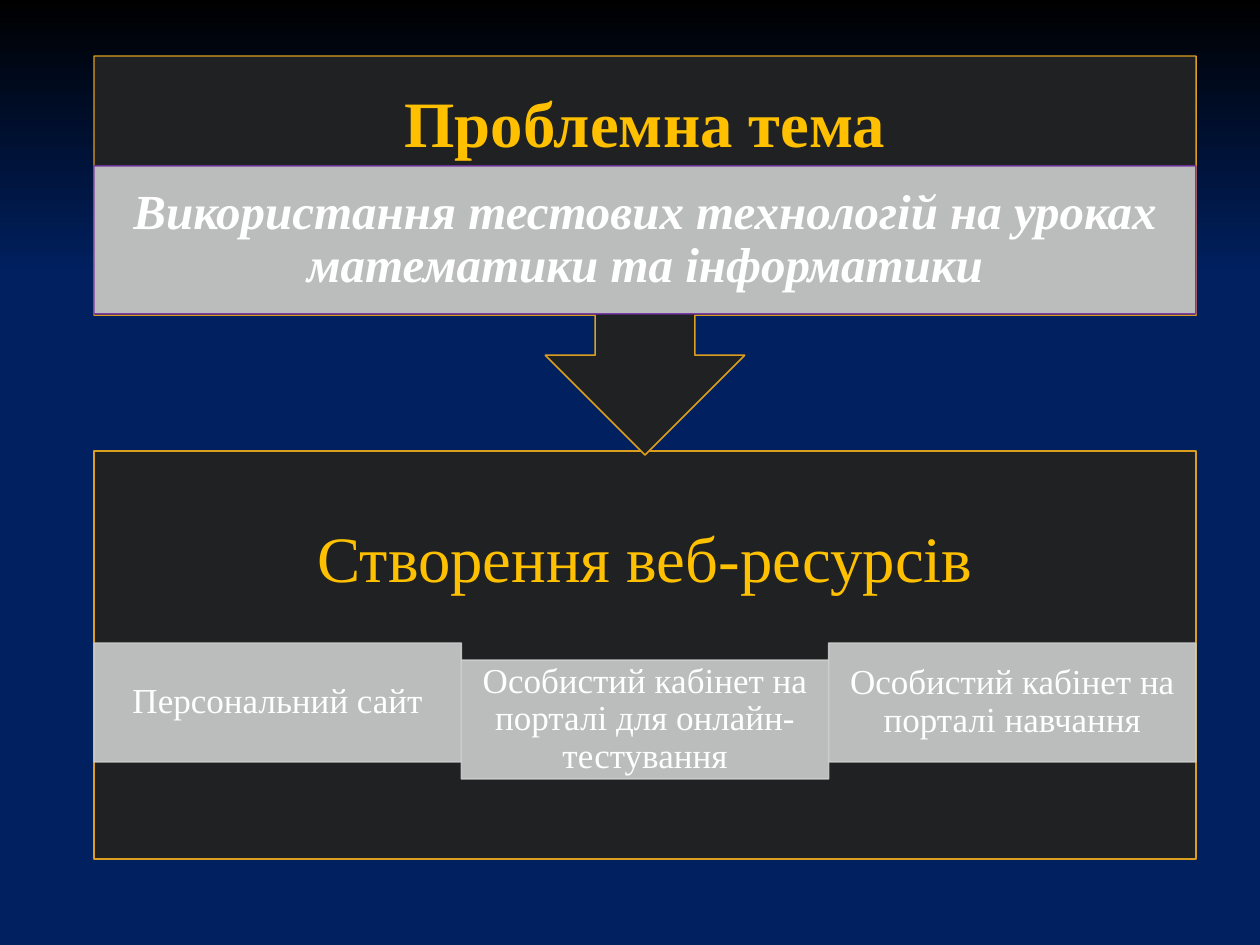
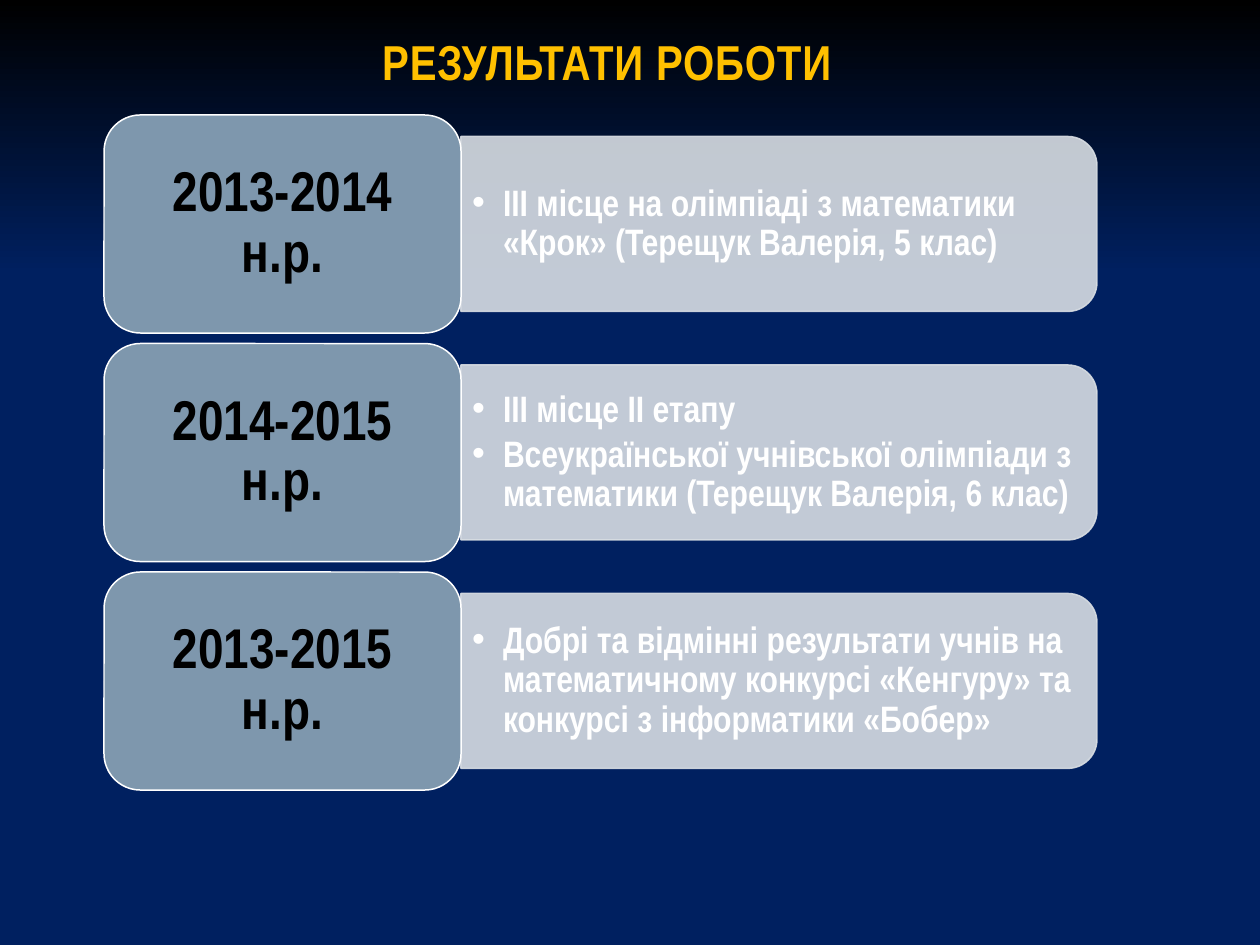
from lxml.etree import SubElement
from pptx import Presentation
from pptx.dml.color import RGBColor
from pptx.enum.shapes import MSO_SHAPE as Shape
from pptx.enum.text import MSO_ANCHOR as Anchor, PP_ALIGN as Align
from pptx.oxml.ns import qn
from pptx.util import Pt

TOPIC = "Проблемна тема"
TOPIC_TEXT = "Використання тестових технологій на уроках математики та інформатики"
RESOURCES = "Створення веб-ресурсів"
RESOURCE_KINDS = [
    "Персональний сайт",
    "Особистий кабінет на порталі для онлайн-тестування",
    "Особистий кабінет на порталі навчання",
]
RESULTS_TITLE = "РЕЗУЛЬТАТИ РОБОТИ"
RESULTS = [
    ("2013-2014 н.р.", ["ІІІ місце на олімпіаді з математики «Крок» (Терещук Валерія, 5 клас)"]),
    ("2014-2015 н.р.", ["ІІІ місце ІІ етапу",
                        "Всеукраїнської учнівської олімпіади з математики (Терещук Валерія, 6 клас)"]),
    ("2013-2015 н.р.", ["Добрі та відмінні результати учнів на математичному конкурсі "
                        "«Кенгуру» та конкурсі з інформатики «Бобер»"]),
]

NAVY, BLACK, WHITE, GOLD = "002060", "000000", "FFFFFF", "FFC000"
PANEL, PANEL_EDGE, CHIP, PURPLE = "1F2123", "DC9E1F", "CDCDCD", "7030A0"
YEAR_FILL, BAR_FILL = "7E97AD", "D8DDE3"
SERIF, NARROW = "Times New Roman", "Arial Narrow"

HEADING = {"name": SERIF, "size": Pt(37), "color": GOLD}
TOPIC_HEADING = HEADING | {"bold": True}
TOPIC_BODY = {"name": SERIF, "size": Pt(28), "color": WHITE, "bold": True, "italic": True}
CHIP_TEXT = {"name": SERIF, "size": Pt(20), "color": WHITE}
TITLE = {"name": NARROW, "size": Pt(28), "color": GOLD, "bold": True}
YEAR = {"name": NARROW, "size": Pt(32), "color": BLACK, "bold": True}
RESULT = {"name": NARROW, "size": Pt(21), "color": WHITE, "bold": True}

SCALE = 914400 / 126
PANEL_LEFT, PANEL_WIDTH = 94, 1102


def px(length):
    return round(length * SCALE)


def rgb(value):
    return RGBColor.from_string(value)


def set_opacity(fill, percent):
    """Make a solid fill let the background through."""
    color = fill._xPr.find(qn("a:solidFill"))[0]
    SubElement(color, qn("a:alpha"), val=str(percent * 1000))


def add_block(slide, kind, place, fill, edge, opacity=100):
    block = slide.shapes.add_shape(kind, *map(px, place))
    block.shadow.inherit = False
    block.line.width = Pt(0.85)
    for paint, color in ((block.fill, fill), (block.line.fill, edge)):
        paint.solid()
        paint.fore_color.rgb = rgb(color)
        if opacity < 100:
            set_opacity(paint, opacity)
    return block


def add_bullet(para):
    properties = para._p.get_or_add_pPr()
    properties.set("marL", str(px(31)))
    properties.set("indent", str(-px(31)))
    SubElement(properties, qn("a:buFont"), typeface="Arial")
    SubElement(properties, qn("a:buChar"), char="•")


def write(shape, texts, style, insets, bullets=False, anchor=Anchor.MIDDLE):
    """Fill a shape with paragraphs; insets run left, top, right, bottom."""
    frame = shape.text_frame
    frame.word_wrap = True
    frame.vertical_anchor = anchor
    for side, inset in zip(("left", "top", "right", "bottom"), insets):
        setattr(frame, f"margin_{side}", px(inset))
    for number, text in enumerate(texts):
        para = frame.add_paragraph() if number else frame.paragraphs[0]
        para.alignment = Align.LEFT if bullets else Align.CENTER
        para.line_spacing = 0.9
        if bullets:
            para.space_after = Pt(3)
            add_bullet(para)
        span = para.add_run()
        span.text = text
        for name, value in style.items():
            if name == "color":
                span.font.color.rgb = rgb(value)
            else:
                setattr(span.font, name, value)


def paint_background(master):
    fill = master.background.fill
    fill.gradient()
    fill.gradient_angle = 270
    for stop, color, position in zip(fill.gradient_stops, (BLACK, NAVY), (0, 0.29)):
        stop.color.rgb = rgb(color)
        stop.position = position


def build_topic(deck):
    slide = deck.slides.add_slide(deck.slide_layouts[6])
    panel = add_block(slide, Shape.RECTANGLE, (PANEL_LEFT, 451, PANEL_WIDTH, 408),
                      PANEL, PANEL_EDGE)
    write(panel, [RESOURCES], HEADING, (37, 37, 37, 225))

    width = PANEL_WIDTH / len(RESOURCE_KINDS)
    for column, text in enumerate(RESOURCE_KINDS):
        top = 643 + 17 * (column % 2)
        chip = add_block(slide, Shape.RECTANGLE,
                         (PANEL_LEFT + column * width, top, width, 119), CHIP, CHIP, 90)
        write(chip, [text], CHIP_TEXT, (20, 4, 20, 4))

    callout = add_block(slide, Shape.DOWN_ARROW_CALLOUT,
                        (PANEL_LEFT, 56, PANEL_WIDTH, 399), PANEL, PANEL_EDGE)
    write(callout, [TOPIC], TOPIC_HEADING, (37, 37, 37, 156))
    strip = add_block(slide, Shape.RECTANGLE, (PANEL_LEFT, 166, PANEL_WIDTH, 148),
                      CHIP, PURPLE, 90)
    write(strip, [TOPIC_TEXT], TOPIC_BODY, (28, 5, 28, 5))


def build_results(deck):
    slide = deck.slides.add_slide(deck.slide_layouts[5])
    title = slide.shapes.title
    for name, length in {"left": 64, "top": 26, "width": 1086, "height": 188}.items():
        setattr(title, name, px(length))
    write(title, [RESULTS_TITLE], TITLE, (12, 12, 12, 6), anchor=Anchor.TOP)
    title.text_frame.paragraphs[0].runs[0].font._element.set("spc", "50")

    left, year_width, year_height, pitch = 104, 357, 218, 228.5
    bar_left, bar_width, bar_height = left + year_width, 636, 175
    for row, (year, results) in enumerate(RESULTS):
        top = 115 + row * pitch
        middle = top + year_height / 2
        # The bar stands upright and is turned, so its place is set from its centre.
        bar = add_block(slide, Shape.ROUND_2_SAME_RECTANGLE,
                        (bar_left + (bar_width - bar_height) / 2, middle - bar_width / 2,
                         bar_height, bar_width), BAR_FILL, BAR_FILL, 90)
        bar.rotation = 90
        box = slide.shapes.add_textbox(*map(px, (bar_left, middle - 79, 626, 158)))
        write(box, results, RESULT, (11, 5, 11, 5), bullets=True)
        label = add_block(slide, Shape.ROUNDED_RECTANGLE,
                          (left, top, year_width, year_height), YEAR_FILL, WHITE)
        write(label, [year], YEAR, (16, 9, 16, 9))


def main():
    deck = Presentation()
    deck.slide_width, deck.slide_height = px(1260), px(945)
    paint_background(deck.slide_master)
    build_topic(deck)
    build_results(deck)
    deck.save("out.pptx")


if __name__ == "__main__":
    main()
